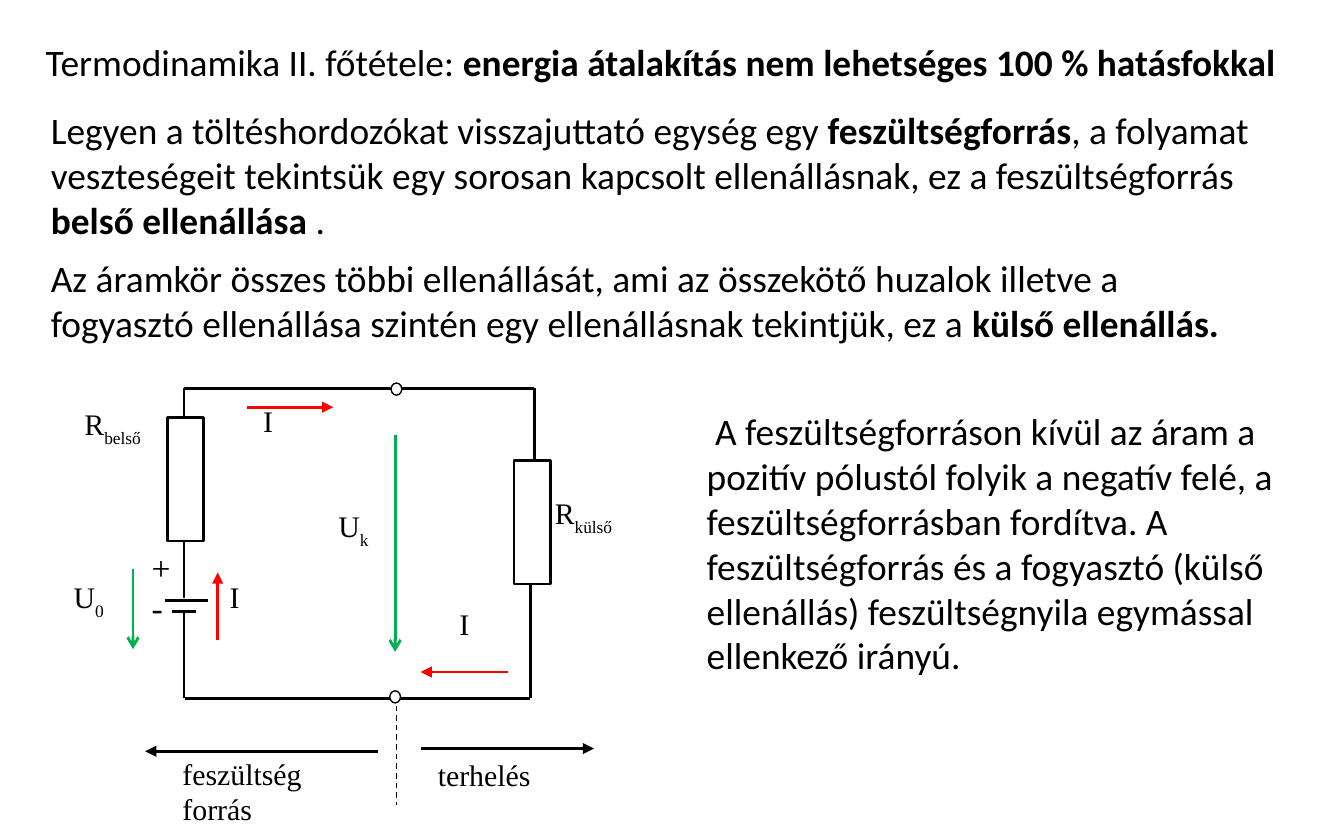
"""Builds the slide on source voltage, internal resistance and load."""
from lxml.etree import SubElement
from pptx import Presentation
from pptx.dml.color import RGBColor
from pptx.enum.dml import MSO_LINE_DASH_STYLE as Dash
from pptx.enum.shapes import MSO_CONNECTOR as Connector, MSO_SHAPE as Shape
from pptx.enum.text import MSO_ANCHOR as Anchor, MSO_AUTO_SIZE as AutoSize, PP_ALIGN as Align
from pptx.oxml.ns import qn
from pptx.util import Inches, Pt

THEME = {
    "black": RGBColor(0, 0, 0),
    "white": RGBColor(255, 255, 255),
    "red": RGBColor(255, 0, 0),
    "green": RGBColor(0, 176, 80),
    "body": {"name": "Calibri", "size": Pt(20)},
    "label": {"name": "Times New Roman", "size": Pt(16)},
    "polarity": {"name": "Times New Roman", "size": Pt(18)},
    "wire": Pt(1.5),
    "thin": Pt(0.75),
}

TITLE = ((0.24, 0.24, 9.53, 0.44), [[
    ("Termodinamika II. főtétele: ", ""),
    ("energia átalakítás nem lehetséges 100 % hatásfokkal", "bold")]])

BODY_TEXTS = [
    ((0.28, 0.75, 9.21, 1.11), [
        [("Legyen a töltéshordozókat visszajuttató egység egy ", ""),
         ("feszültségforrás", "bold"),
         (", a folyamat veszteségeit tekintsük egy sorosan kapcsolt ellenállásnak, "
          "ez a feszültségforrás", "")],
        [("belső ellenállása ", "bold"), (".", "")]]),
    ((0.28, 1.85, 9.01, 0.77), [
        [("Az áramkör összes többi ellenállását, ami az összekötő huzalok illetve a "
          "fogyasztó ellenállása szintén egy ellenállásnak tekintjük, ez a ", ""),
         ("külső ellenállás.", "bold")]]),
    ((5.16, 2.99, 5.09, 2.12), [
        [(" A feszültségforráson kívül az áram a", "")],
        [("pozitív pólustól folyik a negatív felé, a feszültségforrásban fordítva. "
          "A feszültségforrás és a fogyasztó (külső ellenállás) feszültségnyila "
          "egymással ellenkező irányú.", "")]]),
]

LABELS = [
    ((4.03, 3.63, 1.13, 0.66), "R", "külső"),
    ((1.86, 2.95, 0.43, 0.74), "I", ""),
    ((3.32, 4.46, 0.43, 0.74), "I", ""),
    ((1.61, 4.26, 0.43, 0.74), "I", ""),
    ((2.42, 3.73, 0.86, 0.74), "U", "k"),
    ((0.53, 2.97, 1.08, 0.68), "R", "belső"),
    ((0.45, 4.26, 0.74, 0.6), "U", "0"),
    ((1.26, 5.57, 1.56, 0.99), "feszültség forrás", ""),
    ((3.16, 5.58, 1.56, 0.74), "terhelés", ""),
]
POLARITY = ((1.03, 4.02, 0.5, 0.93), [[("+", "")], [("-", "")]])

WIRES = [
    (1.37, 4.45, 1.37, 4.03), (1.37, 3.31, 1.37, 2.89),
    (3.95, 5.19, 3.95, 4.25), (3.98, 3.48, 3.98, 2.89),
    (1.37, 2.89, 3.97, 2.89), (1.37, 4.55, 1.37, 5.19),
    (1.38, 5.2, 3.94, 5.2),
]
BATTERY_PLATES = [(1.23, 4.47, 1.55, 4.47), (1.28, 4.55, 1.46, 4.55)]
RESISTORS = [(0.92, 3.43, 0.92, 0.27), (3.5, 3.75, 0.92, 0.27)]
TERMINALS = [(2.91, 2.85, 0.08, 0.09), (2.9, 5.14, 0.08, 0.09)]
DIVIDER = (2.95, 5.25, 2.95, 5.99)
ARROWS = [
    ("green", "arrow", [(0.99, 4.23, 0.99, 4.83), (2.94, 3.24, 2.94, 4.85)]),
    ("black", "triangle", [(2.81, 5.59, 1.08, 5.59), (3.13, 5.57, 4.42, 5.57)]),
    ("red", "triangle", [(1.84, 3.03, 2.48, 3.03), (3.78, 5, 3.13, 5),
                         (1.62, 4.76, 1.62, 4.26)]),
]


def apply_format(target, values):
    for name, value in values.items():
        setattr(target, name, value)


def write_text(shape, paragraphs, style):
    frame = shape.text_frame
    apply_format(frame, {
        "word_wrap": True, "auto_size": AutoSize.NONE, "vertical_anchor": Anchor.TOP,
        "margin_left": Inches(0.1), "margin_right": Inches(0.1),
        "margin_top": Inches(0.05), "margin_bottom": Inches(0.05)})
    for index, runs in enumerate(paragraphs):
        paragraph = frame.add_paragraph() if index else frame.paragraphs[0]
        apply_format(paragraph, {"alignment": Align.LEFT, "space_before": Pt(0)})
        for text, emphasis in runs:
            run = paragraph.add_run()
            run.text = text
            apply_format(run.font, {**THEME[style], "bold": emphasis == "bold"})
            run.font.color.rgb = THEME["black"]
            if emphasis == "subscript":
                run.font._element.set("baseline", "-30000")


def add_text(slide, box, paragraphs, style):
    write_text(slide.shapes.add_textbox(*map(Inches, box)), paragraphs, style)


def add_outline(slide, kind, box, width, rotation=0):
    shape = slide.shapes.add_shape(kind, *map(Inches, box))
    shape.shadow.inherit = False
    shape.rotation = rotation
    shape.fill.solid()
    shape.fill.fore_color.rgb = THEME["white"]
    shape.line.color.rgb = THEME["black"]
    shape.line.width = THEME[width]


def add_line(slide, ends, color="black", width="wire", head=None, dash=None):
    connector = slide.shapes.add_connector(Connector.STRAIGHT, *map(Inches, ends))
    connector.line.color.rgb = THEME[color]
    connector.line.width = THEME[width]
    if dash:
        connector.line.dash_style = dash
    if head:
        SubElement(connector.line._get_or_add_ln(), qn("a:tailEnd"), type=head)
    SubElement(connector._element.spPr, qn("a:effectLst"))


def main():
    presentation = Presentation()
    apply_format(presentation, {"slide_width": Inches(10), "slide_height": Inches(6.25)})
    slide = presentation.slides.add_slide(presentation.slide_layouts[5])

    box, paragraphs = TITLE
    title = slide.shapes.title
    apply_format(title, dict(zip(("left", "top", "width", "height"), map(Inches, box))))
    write_text(title, paragraphs, "body")
    for box, paragraphs in BODY_TEXTS:
        add_text(slide, box, paragraphs, "body")

    for ends in WIRES + BATTERY_PLATES:
        add_line(slide, ends)
    for box in RESISTORS:
        add_outline(slide, Shape.RECTANGLE, box, "wire", 270)
    for box in TERMINALS:
        add_outline(slide, Shape.OVAL, box, "thin")
    add_line(slide, DIVIDER, width="thin", dash=Dash.DASH)
    for color, head, arrows in ARROWS:
        for ends in arrows:
            add_line(slide, ends, color, head=head)

    for box, symbol, subscript in LABELS:
        runs = [(symbol, "")] + ([(subscript, "subscript")] if subscript else [])
        add_text(slide, box, [runs], "label")
    add_text(slide, *POLARITY, "polarity")
    presentation.save("out.pptx")


if __name__ == "__main__":
    main()
